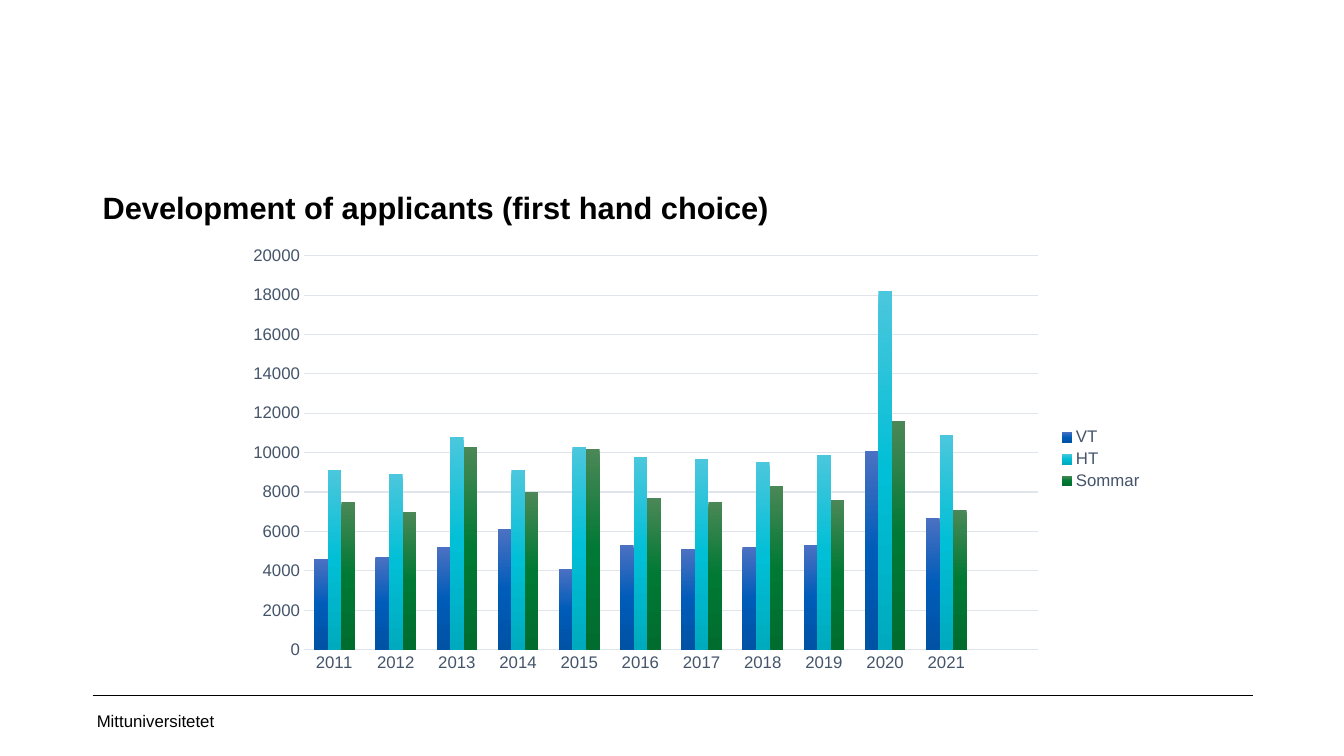
import copy

import pptx
import pptx.chart.data
import pptx.dml.color
import pptx.enum.chart
import pptx.enum.text
import pptx.oxml
import pptx.oxml.ns
import pptx.util

IN = pptx.util.Inches
PT = pptx.util.Pt
WIDTH, HEIGHT = 13.33, 7.5
MARGIN = 0.92
CONTENT_W = 11.51

COLORS = {"text": "000000", "axis": "44546A", "grid": "E0E5EB"}
YEARS = [str(year) for year in range(2011, 2022)] + [""]
TERMS = {
    "VT": ([4600, 4700, 5200, 6100, 4100, 5300, 5100, 5200, 5300, 10100, 6700, None],
           ("4B71C2", "005CB9", "0052A4")),
    "HT": ([9100, 8900, 10800, 9100, 10300, 9800, 9700, 9500, 9900, 18200, 10900, None],
           ("4BC7DD", "00BFD6", "00AABE")),
    "Sommar": ([7500, 7000, 10300, 8000, 10200, 7700, 7500, 8300, 7600, 11600, 7100, None],
               ("4B8857", "007934", "006C2E")),
}


def rgb(value):
    return pptx.dml.color.RGBColor.from_string(value)


def set_all(obj, values):
    for name, value in values.items():
        setattr(obj, name, value)


def set_font(font, size, color, bold=False):
    set_all(font, {"name": "Arial", "size": PT(size), "bold": bold})
    font.color.rgb = rgb(color)


def set_line(line, color, width):
    line.color.rgb = rgb(color)
    line.width = PT(width)


def add_text(s, box, text, size, frame, bold=False, spacing=None):
    tf = s.shapes.add_textbox(*map(IN, box)).text_frame
    set_all(tf, {"word_wrap": True, **frame})
    p = tf.paragraphs[0]
    p.line_spacing = spacing
    r = p.add_run()
    r.text = text
    set_font(r.font, size, COLORS["text"], bold)


def add_title(s, box):
    add_text(s, box, "Development of applicants (first hand choice)", 22,
             {"vertical_anchor": pptx.enum.text.MSO_ANCHOR.TOP}, True, PT(36))


def add_footer(s, box):
    """Rule along the top of the box, with the university's name under it."""
    x, y, w, h = box
    rule = s.shapes.add_connector(pptx.enum.shapes.MSO_CONNECTOR.STRAIGHT,
                                  IN(x), IN(y), IN(x + w), IN(y))
    set_line(rule.line, COLORS["text"], 0.25)
    effects = pptx.oxml.ns.qn("a:effectLst")
    rule._element.spPr.append(rule._element.makeelement(effects, {}))
    add_text(s, (x, y + 0.05, 3, h - 0.05), "Mittuniversitetet", 12,
             {"vertical_anchor": pptx.enum.text.MSO_ANCHOR.MIDDLE, "margin_left": IN(0.04)})


def fill_gradient(series, colors):
    """Fill the bars from top to bottom with evenly spaced stops."""
    fill = series.format.fill
    fill.gradient()
    fill.gradient_angle = 270
    stops = series._element.find(".//" + pptx.oxml.ns.qn("a:gsLst"))
    while len(stops) < len(colors):
        stops.append(copy.deepcopy(stops[0]))
    for i, (stop, color) in enumerate(zip(fill.gradient_stops, colors)):
        stop.color.rgb = rgb(color)
        stop.position = i / (len(colors) - 1)


def style_axes(chart):
    enum = pptx.enum.chart
    for axis in (chart.category_axis, chart.value_axis):
        set_all(axis, {"major_tick_mark": enum.XL_TICK_MARK.NONE,
                       "minor_tick_mark": enum.XL_TICK_MARK.NONE})
        set_font(axis.tick_labels.font, 12, COLORS["axis"])
    set_line(chart.category_axis.format.line, COLORS["grid"], 0.75)
    values = chart.value_axis
    set_all(values, {"minimum_scale": 0, "maximum_scale": 20000, "major_unit": 2000})
    values.format.line.fill.background()
    set_line(values.major_gridlines.format.line, COLORS["grid"], 0.75)


def add_applicants_chart(s, box):
    enum = pptx.enum.chart
    data = pptx.chart.data.CategoryChartData(number_format="General")
    data.categories = YEARS
    for term, (applicants, _) in TERMS.items():
        data.add_series(term, applicants)
    chart = s.shapes.add_chart(enum.XL_CHART_TYPE.COLUMN_CLUSTERED,
                               *map(IN, box), data).chart
    set_all(chart, {"has_title": False, "has_legend": True})
    set_font(chart.font, 10, COLORS["text"])
    set_all(chart.legend, {"position": enum.XL_LEGEND_POSITION.RIGHT,
                           "include_in_layout": False})
    set_font(chart.legend.font, 12, COLORS["axis"])
    style_axes(chart)
    plot = chart.plots[0]
    set_all(plot, {"gap_width": 150, "overlap": 0, "vary_by_categories": False})
    for series in plot.series:
        fill_gradient(series, TERMS[series.name][1])


def main():
    prs = pptx.Presentation()
    set_all(prs, {"slide_width": IN(WIDTH), "slide_height": IN(HEIGHT)})
    s = prs.slides.add_slide(prs.slide_layouts[6])
    add_footer(s, (MARGIN, 6.9, CONTENT_W, 0.45))
    add_title(s, (MARGIN, 1.69, CONTENT_W, 0.81))
    add_applicants_chart(s, (2.33, 2.36, 9.11, 4.39))
    prs.save("out.pptx")


if __name__ == "__main__":
    main()
